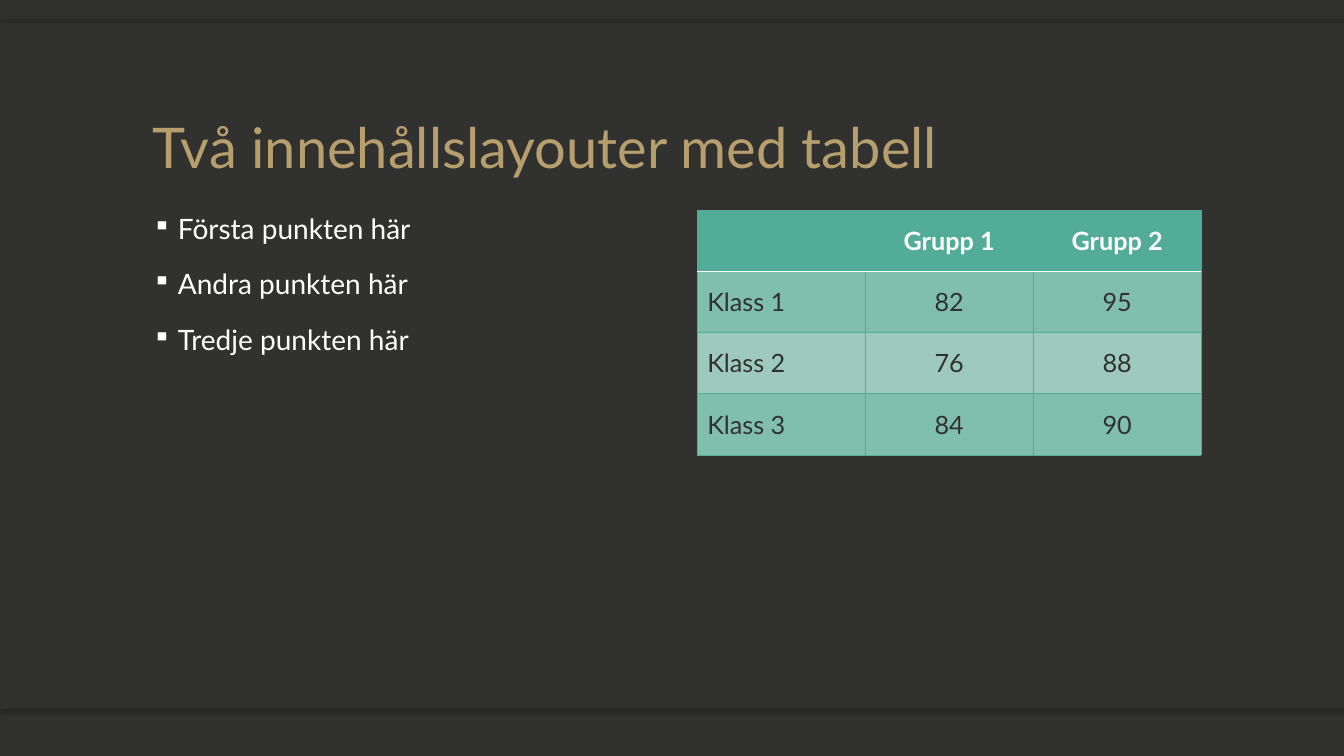
from dataclasses import dataclass

from pptx import Presentation
from pptx.dml.color import RGBColor as RGB
from pptx.enum.shapes import MSO_SHAPE as Shape
from pptx.enum.text import MSO_ANCHOR as Anchor, MSO_AUTO_SIZE as AutoSize, PP_ALIGN as Align
from pptx.oxml import parse_xml
from pptx.oxml.ns import nsdecls
from pptx.util import Pt


@dataclass(frozen=True)
class Theme:
    font: str = "Lato"
    dark: str = "31312F"
    gold: str = "B79E6D"
    white: str = "FFFFFF"
    teal: str = "52AC97"
    teal_mid: str = "80BFAE"
    teal_pale: str = "9ECABD"
    title_size: int = 40
    body_size: int = 20
    table_size: int = 18


THEME = Theme()
SLIDE_WIDTH, SLIDE_HEIGHT = 960, 540
POINTS = ["Första punkten här", "Andra punkten här", "Tredje punkten här"]
SCORES = [
    ["", "Grupp 1", "Grupp 2"],
    ["Klass 1", "82", "95"],
    ["Klass 2", "76", "88"],
    ["Klass 3", "84", "90"],
]


def style_font(paragraph, size, color, bold=False):
    font = paragraph.font
    font.name, font.size, font.bold = THEME.font, Pt(size), bold
    font.color.rgb = RGB.from_string(color)


def add_panel(slide, left, top, width, height, shadow_angle=None):
    panel = slide.shapes.add_shape(Shape.RECTANGLE, Pt(left), Pt(top), Pt(width), Pt(height))
    panel.fill.solid()
    panel.fill.fore_color.rgb = RGB.from_string(THEME.dark)
    panel.line.fill.background()
    panel.shadow.inherit = False
    if shadow_angle is not None:
        effects = panel._element.spPr.find("{*}effectLst")
        effects.append(parse_xml(
            f'<a:outerShdw {nsdecls("a")} blurRad="{Pt(4)}" dist="{Pt(2)}" '
            f'dir="{shadow_angle * 60000}" algn="ctr" rotWithShape="0">'
            '<a:srgbClr val="000000"><a:alpha val="25000"/></a:srgbClr></a:outerShdw>'))


def add_backdrop(slide, left, top, width, height, edge=35.3):
    add_panel(slide, left, top + height - edge, width, edge, shadow_angle=90)
    add_panel(slide, left, top, width, edge, shadow_angle=270)
    add_panel(slide, left, top, width, height)


def place_title(slide, heading, left, top, width, height):
    title = slide.shapes.title
    slide.shapes._spTree.append(title._element)
    title.left, title.top, title.width, title.height = map(Pt, (left, top, width, height))
    frame = title.text_frame
    frame.text = heading
    frame.word_wrap = True
    frame.auto_size = AutoSize.NONE
    frame.vertical_anchor = Anchor.BOTTOM
    line = frame.paragraphs[0]
    line.alignment = Align.LEFT
    line.line_spacing = 0.9
    style_font(line, THEME.title_size, THEME.gold)


def add_points(slide, points, left, top, width, height, indent=18):
    frame = slide.shapes.add_textbox(Pt(left), Pt(top), Pt(width), Pt(height)).text_frame
    frame.word_wrap = True
    for index, text in enumerate(points):
        point = frame.add_paragraph() if index else frame.paragraphs[0]
        point.text = text
        properties = point._p.get_or_add_pPr()
        properties.set("marL", str(Pt(indent)))
        properties.set("indent", str(-Pt(indent)))
        properties.append(parse_xml(f'<a:buSzPct {nsdecls("a")} val="90000"/>'))
        properties.append(parse_xml(f'<a:buChar {nsdecls("a")} char="▪"/>'))
        point.line_spacing = 0.9
        if index:
            point.space_before = Pt(18)
        style_font(point, THEME.body_size, THEME.white)


def set_borders(cell, row):
    teal_line, header_line = (THEME.teal, 0.5), (THEME.white, 1)
    borders = {
        "lnL": teal_line,
        "lnR": teal_line,
        "lnT": header_line if row == 1 else teal_line,
        "lnB": header_line if row == 0 else teal_line,
    }
    for side, (color, weight) in borders.items():
        cell._tc.get_or_add_tcPr().append(parse_xml(
            f'<a:{side} {nsdecls("a")} w="{Pt(weight)}"><a:solidFill>'
            f'<a:srgbClr val="{color}"/></a:solidFill></a:{side}>'))


def add_scores(slide, scores, left, top, width, height):
    table = slide.shapes.add_table(
        len(scores), len(scores[0]), Pt(left), Pt(top), Pt(width), Pt(height)).table
    for column in table.columns:
        column.width = Pt(width / len(scores[0]))
    for row, values in enumerate(scores):
        table.rows[row].height = Pt(height / len(scores))
        header = row == 0
        fill = THEME.teal if header else THEME.teal_mid if row % 2 else THEME.teal_pale
        for column, value in enumerate(values):
            cell = table.cell(row, column)
            cell.text = value
            cell.vertical_anchor = Anchor.MIDDLE
            set_borders(cell, row)
            cell.fill.solid()
            cell.fill.fore_color.rgb = RGB.from_string(fill)
            label = cell.text_frame.paragraphs[0]
            label.alignment = Align.CENTER if column else Align.LEFT
            style_font(label, THEME.table_size, THEME.white if header else THEME.dark, header)


def build_table_slide(deck, left, top, width, height):
    slide = deck.slides.add_slide(deck.slide_layouts[5])
    slide.background.fill.solid()
    slide.background.fill.fore_color.rgb = RGB.from_string(THEME.dark)
    add_backdrop(slide, left, top + 16.5, width, 489.6)
    margin, column_width, content_top = left + 102, 360, top + 150
    content_width = width - 2 * 102
    place_title(slide, "Två innehållslayouter med tabell", margin, top + 33, content_width, 99.5)
    add_points(slide, POINTS, margin, content_top, column_width, 336)
    add_scores(slide, SCORES, margin + content_width - column_width, content_top, column_width, 175)


def main():
    deck = Presentation()
    deck.slide_width, deck.slide_height = Pt(SLIDE_WIDTH), Pt(SLIDE_HEIGHT)
    build_table_slide(deck, 0, 0, SLIDE_WIDTH, SLIDE_HEIGHT)
    deck.save("out.pptx")


if __name__ == "__main__":
    main()
